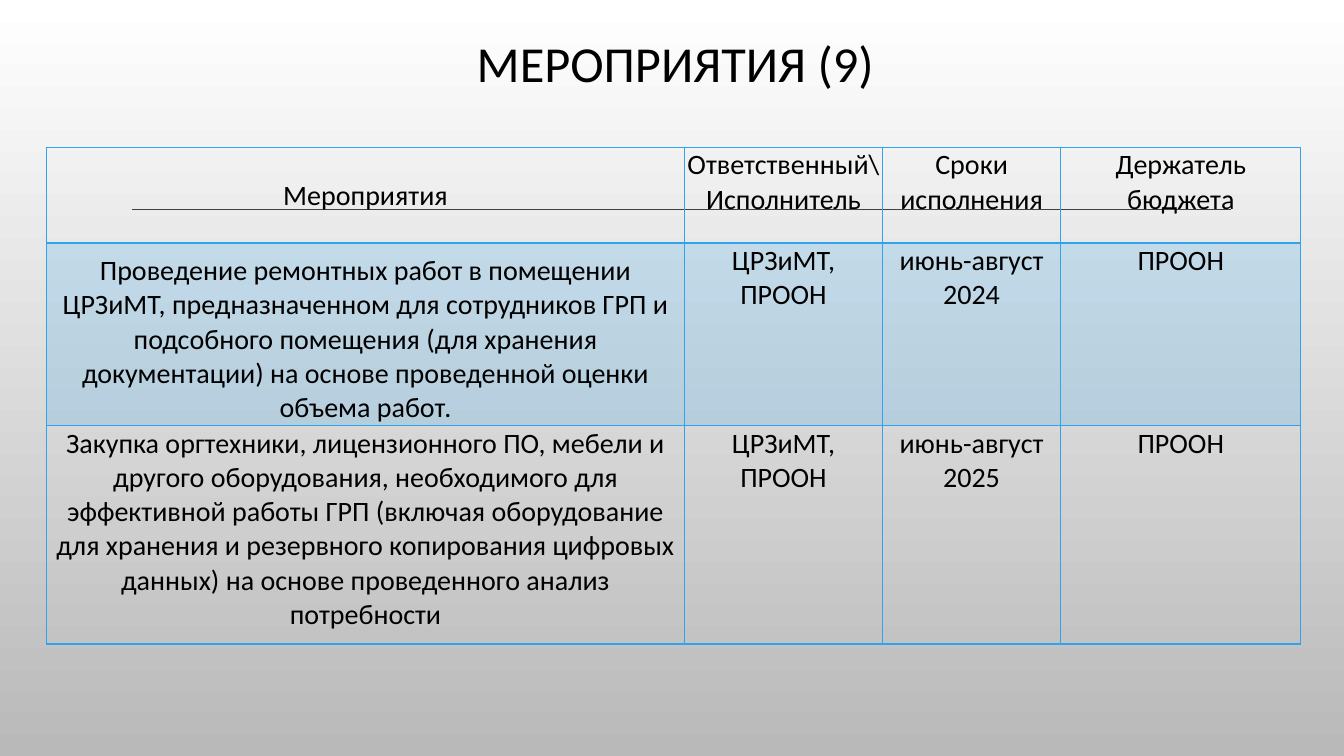
from lxml import etree
from pptx import Presentation, util as u
from pptx.dml.color import RGBColor
from pptx.enum import shapes, text
from pptx.oxml.ns import qn


def color(value):
    return RGBColor.from_string(value)


class ActivityPage:
    font_name = "Calibri"
    ink = "000000"
    accent = "2FA3EE"
    columns, rows = 160, 90

    def __init__(self, deck):
        self.deck = deck
        self.page = deck.slides.add_slide(deck.slide_layouts[5])

    def x(self, columns):
        return round(self.deck.slide_width * columns / self.columns)

    def y(self, rows):
        return round(self.deck.slide_height * rows / self.rows)

    def background(self, top, bottom):
        fill = self.page.background.fill
        fill.gradient()
        fill.gradient_angle = 270
        for stop, shade, position in zip(fill.gradient_stops, (top, bottom), (0, 1)):
            stop.color.rgb = color(shade)
            stop.position = position

    def rule(self, left, right, top, shade):
        line = self.page.shapes.add_connector(
            shapes.MSO_CONNECTOR.STRAIGHT, self.x(left), self.y(top), self.x(right), self.y(top))
        line.line.color.rgb = color(shade)
        line.line.width = u.Pt(1)
        etree.SubElement(line._element.spPr, qn("a:effectLst"))

    def style(self, para, size):
        para.alignment = text.PP_ALIGN.CENTER
        para.font.name = self.font_name
        para.font.size = u.Pt(size)
        para.font.color.rgb = color(self.ink)

    def title(self, words, left, top, width, height):
        box = self.page.shapes.title
        box.left, box.top = self.x(left), self.y(top)
        box.width, box.height = self.x(width), self.y(height)
        frame = box.text_frame
        frame.text = words
        frame.vertical_anchor = text.MSO_ANCHOR.MIDDLE
        para = frame.paragraphs[0]
        para.line_spacing = 0.9
        self.style(para, 36)

    def borders(self, cell, widths):
        properties = cell._tc.get_or_add_tcPr()
        for index, (side, width) in enumerate(widths.items()):
            line = etree.Element(qn(f"a:ln{side}"), w=str(u.Pt(width)))
            fill = etree.SubElement(line, qn("a:solidFill"))
            etree.SubElement(fill, qn("a:srgbClr"), val=self.accent)
            properties.insert(index, line)

    def tint(self, cell, opacity):
        cell.fill.solid()
        cell.fill.fore_color.rgb = color(self.accent)
        shade = cell._tc.tcPr.find(".//" + qn("a:srgbClr"))
        etree.SubElement(shade, qn("a:alpha"), val=str(opacity * 1000))

    def table(self, records, left, top, widths, heights, anchors):
        table = self.page.shapes.add_table(
            len(heights), len(widths), self.x(left), self.y(top),
            self.x(sum(widths)), self.y(sum(heights))).table
        table.first_row = table.horz_banding = False
        for column, width in zip(table.columns, widths):
            column.width = self.x(width)
        for row, height in zip(table.rows, heights):
            row.height = self.y(height)
        for row, record in enumerate(records):
            for column, words in enumerate(record):
                cell = table.cell(row, column)
                cell.text = words
                cell.margin_left = cell.margin_right = cell.margin_top = u.Inches(0.01)
                cell.margin_bottom = 0
                cell.vertical_anchor = text.MSO_ANCHOR.TOP if column else anchors[row]
                self.style(cell.text_frame.paragraphs[0], 20)
                if row == 1:
                    self.tint(cell, 20)
                else:
                    cell.fill.background()
                self.borders(cell, {"L": 1, "R": 1, "T": 2 if row == 1 else 1,
                                    "B": 2 if row == 0 else 1})


def main():
    deck = Presentation()
    deck.slide_width, deck.slide_height = u.Inches(13.33), u.Inches(7.5)
    page = ActivityPage(deck)
    page.background("FFFFFF", "B9B9B9")
    page.rule(15.72, 146.52, 24.96, "404040")
    page.title("МЕРОПРИЯТИЯ (9)", 14.4, 3.72, 132, 8.4)
    records = [
        ("Мероприятия", "Ответственный\\Исполнитель", "Сроки исполнения", "Держатель бюджета"),
        ("Проведение ремонтных работ в помещении ЦРЗиМТ, предназначенном для сотрудников ГРП "
         "и подсобного помещения (для хранения документации) на основе проведенной оценки "
         "объема работ.", "ЦРЗиМТ, ПРООН", "июнь-август 2024", "ПРООН"),
        ("Закупка оргтехники, лицензионного ПО, мебели и другого оборудования, необходимого "
         "для эффективной работы ГРП (включая оборудование для хранения и резервного "
         "копирования цифровых данных) на основе проведенного анализ потребности",
         "ЦРЗиМТ, ПРООН", "июнь-август 2025", "ПРООН"),
    ]
    anchors = (text.MSO_ANCHOR.MIDDLE, text.MSO_ANCHOR.BOTTOM, text.MSO_ANCHOR.TOP)
    page.table(records, 5.52, 17.52, (76, 23.53, 21.25, 28.57), (11.4, 21.72, 26.04), anchors)
    deck.save("out.pptx")


if __name__ == "__main__":
    main()
